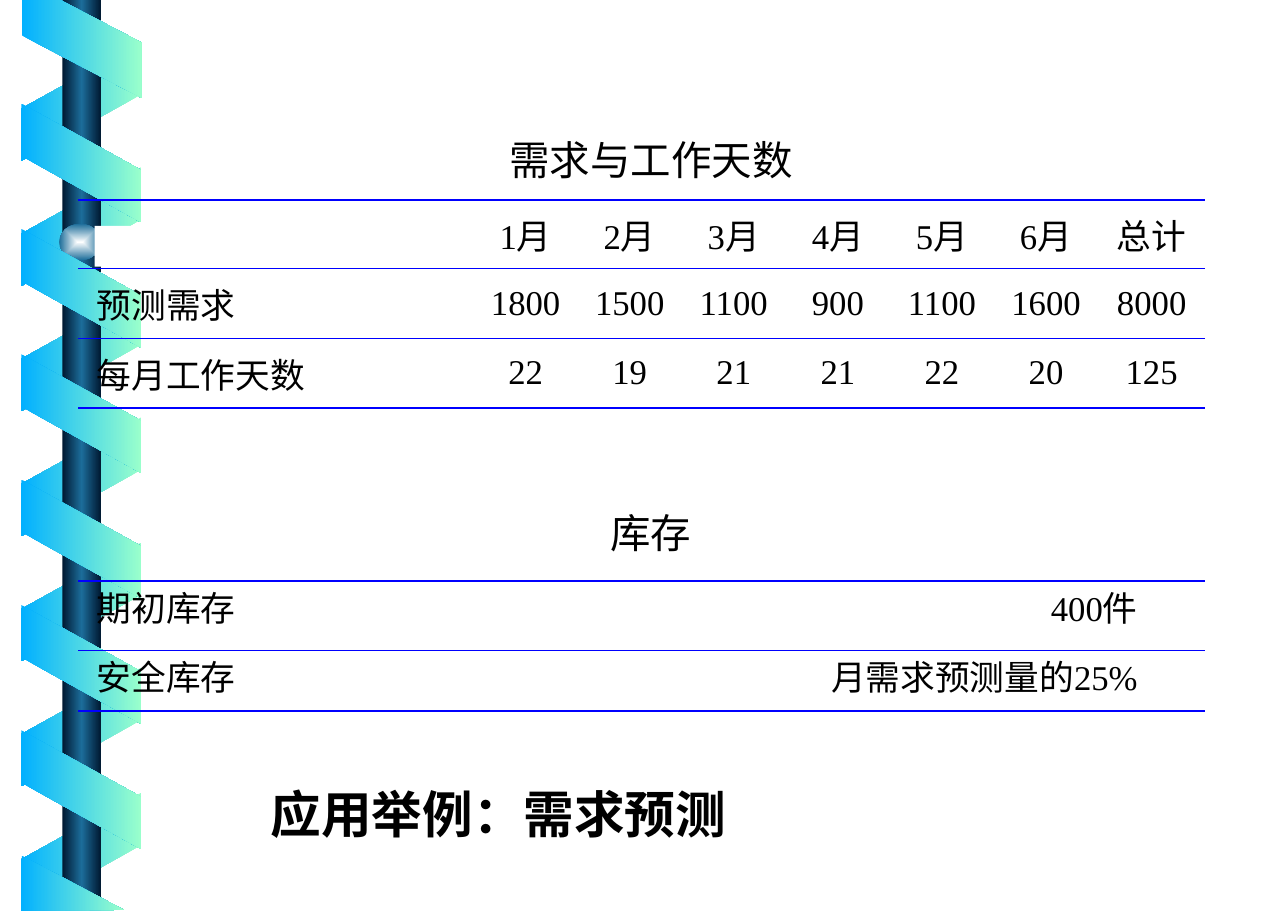
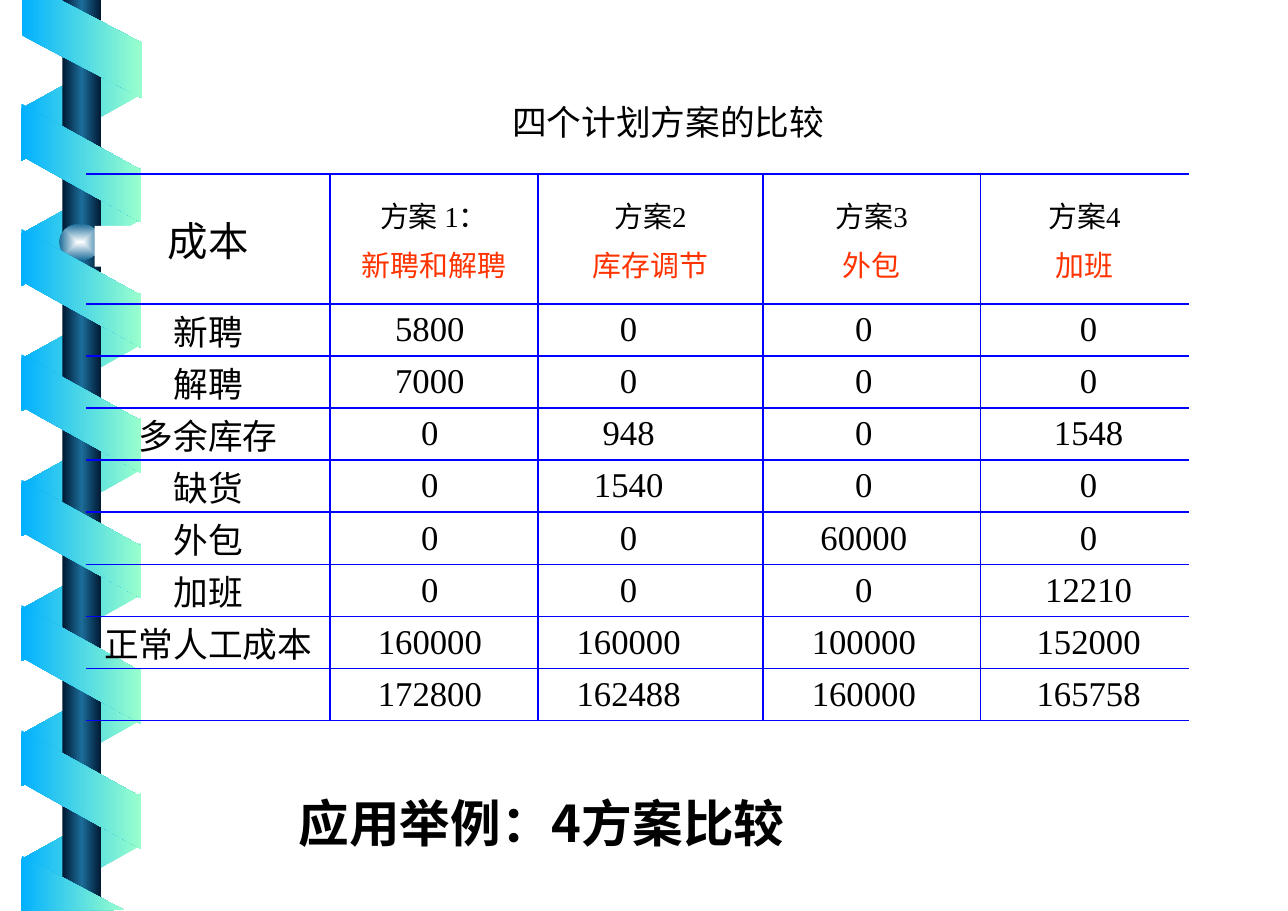
from pptx import Presentation
from pptx.dml.color import RGBColor
from pptx.enum.shapes import MSO_CONNECTOR as Connector, MSO_SHAPE as Preset
from pptx.enum.text import MSO_ANCHOR as Anchor, MSO_AUTO_SIZE as AutoSize, PP_ALIGN as Align
from pptx.oxml import parse_xml
from pptx.oxml.ns import nsdecls, qn
from pptx.util import Inches, Pt

WIDTH, HEIGHT = 99 / 8, 8.75
BLACK = RGBColor(0x00, 0x00, 0x00)
WHITE = RGBColor(0xFF, 0xFF, 0xFF)
PEARL = RGBColor(0xFE, 0xFF, 0xFF)
RED = RGBColor(0xFF, 0x33, 0x00)
RULE_BLUE = RGBColor(0x00, 0x00, 0xFF)
SKY = RGBColor(0x01, 0xB0, 0xFF)
MINT = RGBColor(0x99, 0xFF, 0xCC)
NAVY = RGBColor(0x00, 0x19, 0x32)
STEEL = RGBColor(0x1C, 0x6D, 0x9A)
BODY_FONT, TITLE_FONT = "Times New Roman", "Noto Sans CJK JP"
PLAIN_TABLE = "{2D5ABB26-0587-4C30-8999-92F81FD0307C}"
ACROSS = '<a:lin ang="0" scaled="0"/>'
DOWN = '<a:lin ang="5400000" scaled="0"/>'
OUTWARD = ('<a:path path="shape"><a:fillToRect l="50000" t="50000" '
           'r="50000" b="50000"/></a:path>')


class Style:
    """Holds the deck, the current slide and the shared look."""

    def __init__(self):
        self.deck = Presentation()
        self.deck.slide_width, self.deck.slide_height = Inches(WIDTH), Inches(HEIGHT)
        # The template's 4:3 label does not fit this slide size
        self.deck.element.sldSz.attrib.pop("type", None)
        self.layout = self.deck.slide_layouts[5]
        self.page = None

    def new_page(self, text, left, top, width, height):
        self.page = self.deck.slides.add_slide(self.layout)
        title = self.page.shapes.title
        title.left, title.top = Inches(left), Inches(top)
        title.width, title.height = Inches(width), Inches(height)
        frame = title.text_frame
        frame.text = text
        frame.auto_size, frame.word_wrap = AutoSize.NONE, True
        frame.vertical_anchor = Anchor.BOTTOM
        frame.margin_left = frame.margin_right = Inches(0.12)
        frame.margin_top = frame.margin_bottom = Inches(0.06)
        self.format(frame.paragraphs[0], 35, Align.LEFT, font=TITLE_FONT, bold=True)

    def format(self, para, size, align, color=BLACK, font=BODY_FONT, bold=False):
        para.alignment = align
        for span in para.runs:
            span.font.size, span.font.name = Pt(size), font
            span.font.bold, span.font.color.rgb = bold, color
            if font == TITLE_FONT:
                span.font._element.append(
                    parse_xml(f'<a:ea {nsdecls("a")} typeface="{font}"/>'))

    def caption(self, text, left, top, width, size):
        box = self.page.shapes.add_textbox(
            Inches(left), Inches(top), Inches(width), Inches(0.55))
        box.text_frame.word_wrap = True
        box.text_frame.text = text
        self.format(box.text_frame.paragraphs[0], size, Align.CENTER)

    # Decoration
    def paint(self, shape, colors, direction=ACROSS):
        shape.shadow.inherit = False
        shape.line.fill.background()
        if len(colors) == 1:
            shape.fill.solid()
            shape.fill.fore_color.rgb = colors[0]
            return
        shape.fill.background()
        step = 100000 // (len(colors) - 1)
        stops = "".join(f'<a:gs pos="{i * step}"><a:srgbClr val="{color}"/></a:gs>'
                        for i, color in enumerate(colors))
        gradient = parse_xml(f'<a:gradFill {nsdecls("a")} rotWithShape="0">'
                             f'<a:gsLst>{stops}</a:gsLst>{direction}</a:gradFill>')
        properties = shape._element.spPr
        properties.replace(properties.find(qn("a:noFill")), gradient)

    def preset(self, kind, area, colors, direction=ACROSS, adjust=None, turn=0, flip=False):
        shape = self.page.shapes.add_shape(kind, *map(Inches, area))
        if adjust is not None:
            shape.adjustments[0] = adjust
        shape.rotation = turn
        if flip:
            shape._element.spPr.xfrm.set("flipH", "1")
        self.paint(shape, colors, direction)

    def outline(self, points, colors):
        corners = [(Inches(x), Inches(y)) for x, y in points]
        builder = self.page.shapes.build_freeform(*corners[0])
        builder.add_line_segments(corners[1:], close=True)
        self.paint(builder.convert_to_shape(), colors)

    def move_to_layout(self):
        """Turn the drawn decoration into the background of every page."""
        tree = self.layout.shapes._spTree
        drawn = [s for s in self.page.shapes if not s.is_placeholder]
        for place, shape in enumerate(drawn):
            shape._element.nvSpPr.cNvPr.set("id", str(100 + place))
            tree.insert(2 + place, shape._element)

    # Tables
    def rule(self, x1, y1, x2, y2):
        line = self.page.shapes.add_connector(
            Connector.STRAIGHT, *map(Inches, (x1, y1, x2, y2)))
        line.line.color.rgb, line.line.width = RULE_BLUE, Pt(1)
        line._element.spPr.append(parse_xml(f'<a:effectLst {nsdecls("a")}/>'))

    def grid(self, columns, lines, rows, aligns, inset=(0, 0), upright=False,
             anchor=Anchor.MIDDLE):
        """Draw a ruled table whose column and row edges are given in inches."""
        left, right, top, bottom = columns[0], columns[-1], lines[0], lines[-1]
        last = len(columns) - 2
        table = self.page.shapes.add_table(
            len(rows), last + 1, Inches(left), Inches(top),
            Inches(right - left), Inches(bottom - top)).table
        table.first_row = table.horz_banding = False
        table._tbl.tblPr.find(qn("a:tableStyleId")).text = PLAIN_TABLE
        for column, start, end in zip(table.columns, columns, columns[1:]):
            column.width = Inches(end - start)
        for row, start, end in zip(table.rows, lines, lines[1:]):
            row.height = Inches(end - start)
        for r, texts in enumerate(rows):
            for c, text in enumerate(texts):
                cell = table.cell(r, c)
                cell.text_frame.text = text
                cell.vertical_anchor = anchor
                cell.margin_top = cell.margin_bottom = 0
                cell.margin_left = Inches(inset[0] if c == 0 else 0)
                cell.margin_right = Inches(inset[1] if c == last else 0)
                cell.fill.background()
                for para in cell.text_frame.paragraphs:
                    self.format(para, 24, aligns[c])
        for y in lines:
            self.rule(left, y, right, y)
        for x in columns[1:-1] if upright else ():
            self.rule(x, top, x, bottom)
        return table


def draw_spiral(style):
    band = dict(kind=Preset.PARALLELOGRAM, adjust=0.56)
    # Back of the ribbon, the pole and its knob
    for i in range(7):
        style.preset(area=(0.21, 0.4 + 7.21 / 6 * i, 1.14, 1.15), colors=(MINT, SKY),
                     turn=90, flip=True, **band)
    style.preset(Preset.RECTANGLE, (0.6, 0, 0.37, HEIGHT), (NAVY, STEEL, NAVY))
    style.preset(Preset.PENTAGON, (0.74, 2.17, 11.63, 0.32), (NAVY, STEEL, NAVY),
                 DOWN, adjust=0.62, flip=True)
    style.preset(Preset.OVAL, (0.57, 2.15, 0.4, 0.35), (PEARL, STEEL), OUTWARD)
    # Front of the ribbon, cut off at both slide edges
    for i in range(6):
        style.preset(area=(0.21, 0.99 + 6.02 / 5 * i, 1.14, 1.15), colors=(SKY, MINT),
                     turn=270, **band)
    style.outline([(0.21, 0), (0.21, 0.34), (1.36, 0.94), (1.36, 0.41), (0.58, 0)],
                  (SKY, MINT))
    style.outline([(1.19, 8.74), (0.21, 8.22), (0.2, HEIGHT)], (SKY, MINT))
    style.preset(Preset.RECTANGLE, (0.91, 2.17, WIDTH - 0.91, 0.39), (WHITE,))
    style.move_to_layout()


def demand_page(style):
    style.new_page("应用举例：需求预测", 2.48, 7.42, 5.85, 0.74)
    draw_spiral(style)
    # Demand and working days
    style.caption("需求与工作天数", 4.42, 1.25, 3.67, 28)
    months = [f"{month}月" for month in range(1, 7)]
    style.grid(
        [0.75] + [4.55 + i for i in range(7)] + [11.58], [1.92, 2.58, 3.25, 3.92],
        [["", *months, "总计"],
         ["预测需求", "1800", "1500", "1100", "900", "1100", "1600", "8000"],
         ["每月工作天数", "22", "19", "21", "21", "22", "20", "125"]],
        [Align.LEFT] + [Align.CENTER] * 7, inset=(0.18, 0))
    # Stock
    style.caption("库存", 4.42, 4.83, 3.67, 28)
    style.grid([0.75, 5.5, 11.58], [5.58, 6.25, 6.83],
               [["期初库存", "400件"], ["安全库存", "月需求预测量的25%"]],
               [Align.LEFT, Align.RIGHT], inset=(0.18, 0.65), anchor=Anchor.TOP)


def comparison_page(style):
    style.new_page("应用举例：4方案比较", 2.75, 7.42, 5.77, 0.83)
    style.caption("四个计划方案的比较", 2.42, 0.92, 8, 24)
    # Costs of the four plans
    table = style.grid(
        [0.83, 3.17, 5.17, 7.33, 9.42, 11.42],
        [1.67] + [2.92 + 0.5 * i for i in range(9)],
        [["成本", "方案 1：\n新聘和解聘", "方案2\n库存调节", "方案3\n外包", "方案4\n加班"],
         ["新聘", "5800", "0", "0", "0"],
         ["解聘", "7000", "0", "0", "0"],
         ["多余库存", "0", "948", "0", "1548"],
         ["缺货", "0", "1540", "0", "0"],
         ["外包", "0", "0", "60000", "0"],
         ["加班", "0", "0", "0", "12210"],
         ["正常人工成本", "160000", "160000", "100000", "152000"],
         ["", "172800", "162488", "160000", "165758"]],
        [Align.CENTER] * 5, upright=True)
    # Header: plan name over its method in red
    style.format(table.cell(0, 0).text_frame.paragraphs[0], 28, Align.CENTER)
    for c in range(1, 5):
        name, method = table.cell(0, c).text_frame.paragraphs
        style.format(name, 20, Align.CENTER)
        style.format(method, 20, Align.CENTER, RED)
        method.space_before = Pt(5)
    # Figures sit a little off centre
    for r in range(1, 9):
        for c, pull in {1: 0.08, 2: 0.42, 3: 0.15}.items():
            table.cell(r, c).margin_right = Inches(pull)
        table.cell(r, 4).margin_left = Inches(0.08)


def main():
    style = Style()
    demand_page(style)
    comparison_page(style)
    style.deck.save("out.pptx")


if __name__ == "__main__":
    main()
